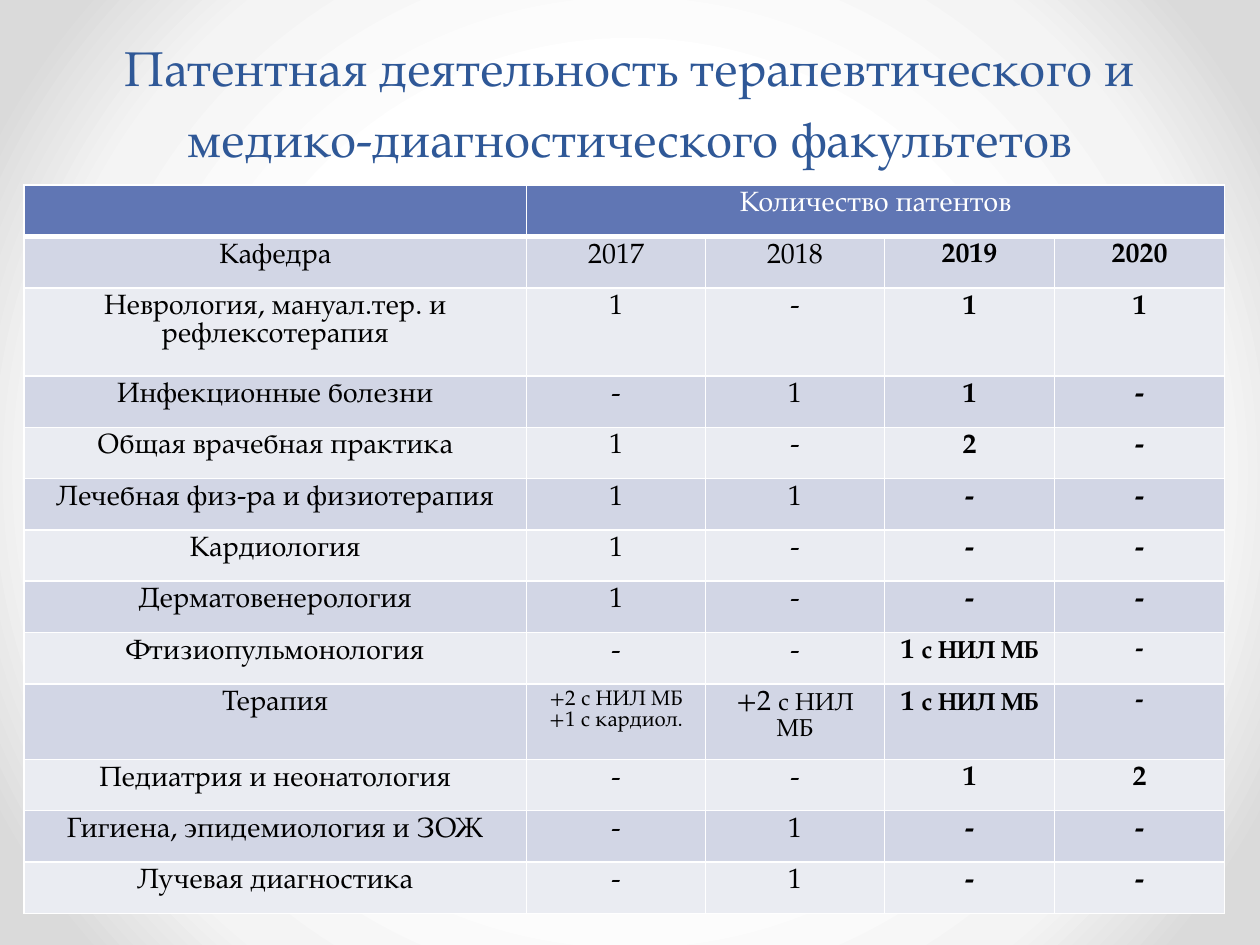
import pptx
import pptx.util
import pptx.oxml
import pptx.oxml.ns
import pptx.dml.color
import pptx.enum.shapes
import pptx.enum.text
from lxml import etree

Inches = pptx.util.Inches
Pt = pptx.util.Pt
RGBColor = pptx.dml.color.RGBColor
CENTER = pptx.enum.text.PP_ALIGN.CENTER

FONT = "TeX Gyre Pagella"
WHITE = RGBColor(0xFF, 0xFF, 0xFF)
BLACK = RGBColor(0, 0, 0)
GRAY = RGBColor(0x80, 0x80, 0x80)
TITLE_BLUE = RGBColor(0x2F, 0x58, 0x97)
HEADER = RGBColor(0x60, 0x76, 0xB4)
BANDS = [RGBColor(0xD2, 0xD6, 0xE5), RGBColor(0xEA, 0xEC, 0xF2)]
BACKGROUND = [(50, WHITE), (76, RGBColor(0xF4, 0xF4, 0xF4)), (92, RGBColor(0xDA, 0xDA, 0xDA))]


def add_run(p, text, size, color, bold=False):
    r = p.add_run()
    r.text = text
    r.font.name = FONT
    r.font.size = Pt(size)
    r.font.bold = bold
    r.font.color.rgb = color


def style_cell(cell, fill, bottom=1):
    tcPr = cell._tc.get_or_add_tcPr()
    for side in ("L", "R", "T", "B"):
        width = Pt(bottom if side == "B" else 1)
        tcPr.append(pptx.oxml.parse_xml(
            f'<a:ln{side} {pptx.oxml.ns.nsdecls("a")} w="{width}"><a:solidFill>'
            f'<a:srgbClr val="{WHITE}"/></a:solidFill></a:ln{side}>'))
    cell.fill.solid()
    cell.fill.fore_color.rgb = fill


prs = pptx.Presentation()
prs.slide_width, prs.slide_height = Inches(10), Inches(7.5)
s = prs.slides.add_slide(prs.slide_layouts[6])

# Radial background
s.background.fill.gradient()
grad = s.background._cSld.find(".//" + pptx.oxml.ns.qn("a:gradFill"))
for child in list(grad):
    grad.remove(child)
stops = etree.SubElement(grad, pptx.oxml.ns.qn("a:gsLst"))
for pos, color in BACKGROUND:
    gs = etree.SubElement(stops, pptx.oxml.ns.qn("a:gs"), pos=str(pos * 1000))
    etree.SubElement(gs, pptx.oxml.ns.qn("a:srgbClr"), val=str(color))
circle = etree.SubElement(grad, pptx.oxml.ns.qn("a:path"), path="circle")
etree.SubElement(circle, pptx.oxml.ns.qn("a:fillToRect"), l="50000", t="50000", r="50000", b="50000")

# Footer dots
for x in (9.25, 0.62):
    sp = s.shapes.add_shape(pptx.enum.shapes.MSO_SHAPE.OVAL,
                            Inches(x), Inches(7.11), Inches(0.09), Inches(0.09))
    sp.shadow.inherit = False
    sp.fill.solid()
    sp.fill.fore_color.rgb = GRAY
    sp.line.fill.background()

# Title
sp = s.shapes.add_textbox(Inches(0.5), Inches(0.2), Inches(9), Inches(1.18))
tf = sp.text_frame
tf.word_wrap = True
tf.vertical_anchor = pptx.enum.text.MSO_ANCHOR.BOTTOM
p = tf.paragraphs[0]
p.alignment = CENTER
p.line_spacing = Pt(41)
add_run(p, "Патентная деятельность терапевтического и медико-диагностического факультетов",
        28, TITLE_BLUE)

# Table text: a cell is a string, or a list of paragraphs of (text, size) runs
LAB = ("с НИЛ МБ", 14)
DASH = [[("-", 14)]]
ROWS = [
    ["", "Количество патентов", "", "", ""],
    ["Кафедра", "2017", "2018", "2019", "2020"],
    ["Неврология, мануал.тер. и рефлексотерапия", "1", "-", "1", "1"],
    ["Инфекционные болезни", "-", "1", "1", "-"],
    ["Общая врачебная практика", "1", "-", "2", "-"],
    ["Лечебная физ-ра и физиотерапия", "1", "1", "-", "-"],
    ["Кардиология", "1", "-", "-", "-"],
    ["Дерматовенерология", "1", "-", "-", "-"],
    ["Фтизиопульмонология", "-", "-", [[("1 ", 16), LAB]], DASH],
    ["Терапия", [[("+2 с НИЛ МБ", 12)], [("+1 с кардиол.", 12)]],
     [[("+2 ", 16), LAB]], [[("1 ", 16), LAB]], DASH],
    ["Педиатрия и неонатология", "-", "-", "1", "2"],
    ["Гигиена, эпидемиология и ЗОЖ", "-", "1", "-", "-"],
    ["Лучевая диагностика", "-", "1", "-", "-"],
]
COLUMNS = [3.99, 1.42, 1.42, 1.35, 1.35]
HEIGHT = 5.7
TALL_ROWS = {2: 0.7, 9: 0.52}
row_height = (HEIGHT - sum(TALL_ROWS.values())) / (len(ROWS) - len(TALL_ROWS))

# Table
table = s.shapes.add_table(len(ROWS), len(COLUMNS), Inches(0.19), Inches(1.47),
                           Inches(sum(COLUMNS)), Inches(HEIGHT)).table
for column, width in zip(table.columns, COLUMNS):
    column.width = Inches(width)
for i, row in enumerate(ROWS):
    table.rows[i].height = Inches(TALL_ROWS.get(i, row_height))
    for j, content in enumerate(row):
        cell = table.cell(i, j)
        style_cell(cell, BANDS[(i - 1) % 2] if i else HEADER, 1 if i else 3)
        if not content:
            continue
        paragraphs = [[(content, 16)]] if isinstance(content, str) else content
        tf = cell.text_frame
        for k, runs in enumerate(paragraphs):
            p = tf.add_paragraph() if k else tf.paragraphs[0]
            p.alignment = CENTER
            for text, size in runs:
                add_run(p, text, size, BLACK if i else WHITE, bold=i > 0 and j > 2)
table.cell(0, 1).merge(table.cell(0, 4))

prs.save("out.pptx")
